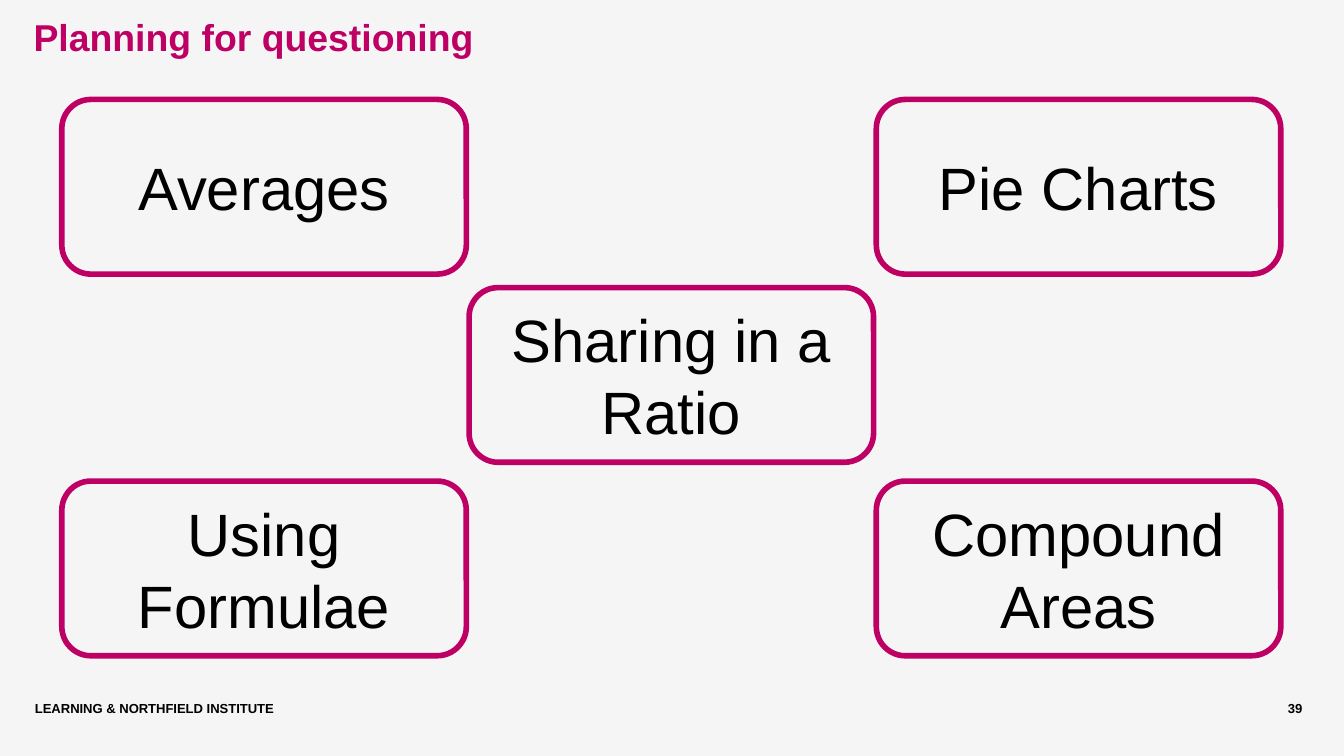
from pptx import Presentation
from pptx.dml.color import RGBColor
from pptx.enum import shapes, text
from pptx.util import Inches, Pt

# Content
TITLE = "Planning for questioning"
FOOTER = "LEARNING & NORTHFIELD INSTITUTE"
PAGE_NUMBER = "39"
TOPICS = [  # wording, column, row
    ("Averages", 0, 0),
    ("Pie Charts", 2, 0),
    ("Sharing in a Ratio", 1, 1),
    ("Using Formulae", 0, 2),
    ("Compound Areas", 2, 2),
]

# Style and grid
COLORS = {"background": "F5F5F5", "accent": "BE0064", "text": "000000"}
FONT = "Arial"
CARD_WIDTH, CARD_HEIGHT = 3.01, 1.3
CARD_LEFT, COLUMN_STEP = 0.46, 3.03
ROW_TOPS = [0.74, 2.14, 3.58]


def color(name):
    return RGBColor.from_string(COLORS[name])


def write(shape, wording, size, align, color_name="text", bold=False):
    frame = shape.text_frame
    frame.word_wrap = True
    frame.text = wording
    paragraph = frame.paragraphs[0]
    paragraph.alignment = align
    font = paragraph.runs[0].font
    font.name, font.size, font.bold = FONT, Pt(size), bold
    font.color.rgb = color(color_name)
    return paragraph


def add_label(slide, box, wording, size, align=text.PP_ALIGN.LEFT, color_name="text"):
    label = slide.shapes.add_textbox(*map(Inches, box))
    frame = label.text_frame
    frame.margin_left = frame.margin_right = frame.margin_top = frame.margin_bottom = 0
    return write(label, wording, size, align, color_name, bold=True)


def add_card(slide, wording, column, row):
    card = slide.shapes.add_shape(
        shapes.MSO_SHAPE.ROUNDED_RECTANGLE,
        Inches(CARD_LEFT + column * COLUMN_STEP), Inches(ROW_TOPS[row]),
        Inches(CARD_WIDTH), Inches(CARD_HEIGHT))
    card.shadow.inherit = False
    card.fill.background()
    card.line.color.rgb = color("accent")
    card.line.width = Pt(3)
    card.text_frame.vertical_anchor = text.MSO_ANCHOR.MIDDLE
    write(card, wording, 32, text.PP_ALIGN.CENTER)


def main():
    # Widescreen slide, 16 by 9
    presentation = Presentation()
    presentation.slide_width = Inches(10)
    presentation.slide_height = Inches(10) * 9 // 16
    slide = presentation.slides.add_slide(presentation.slide_layouts[6])
    slide.background.fill.solid()
    slide.background.fill.fore_color.rgb = color("background")

    # Footer and page number
    add_label(slide, (0.26, 5.21, 8.41, 0.3), FOOTER, 7)
    add_label(slide, (8.7, 5.21, 0.99, 0.3), PAGE_NUMBER, 7, text.PP_ALIGN.RIGHT)

    # Title
    title = add_label(slide, (0.25, 0.16, 9.23, 0.76), TITLE, 20, color_name="accent")
    title.line_spacing = Pt(20)

    # Topic cards
    for wording, column, row in TOPICS:
        add_card(slide, wording, column, row)

    presentation.save("out.pptx")


if __name__ == "__main__":
    main()
